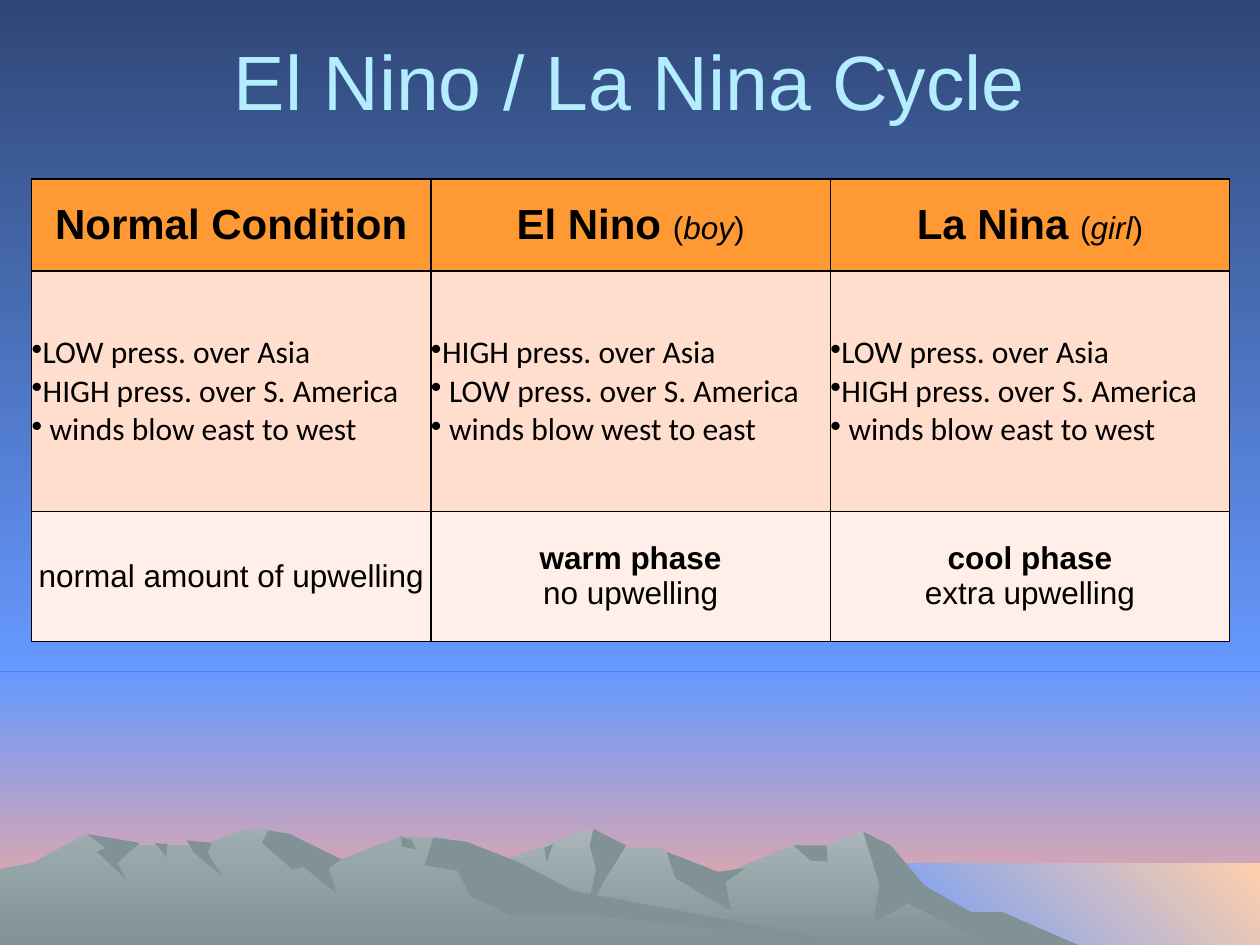
from pptx import Presentation
from pptx import util as u
from pptx.dml.color import RGBColor
from pptx.enum import shapes, text
from pptx.oxml import parse_xml
from pptx.oxml.ns import nsdecls

PX = 9144  # 100 px to the inch
WIDE, HIGH, HORIZON = 1000, 750, 533

# ---- Content ----
TITLE = "El Nino / La Nina Cycle"
HEADS = [("Normal Condition", ""), ("El Nino ", "boy"), ("La Nina ", "girl")]
USUAL = ["LOW press. over Asia", "HIGH press. over S. America", " winds blow east to west"]
TURNED = ["HIGH press. over Asia", " LOW press. over S. America", " winds blow west to east"]
FACTS = [USUAL, TURNED, USUAL]
PHASES = [("", "normal amount of upwelling"), ("warm phase", "no upwelling"),
          ("cool phase", "extra upwelling")]
COL_W, ROW_H = 317, (73, 191, 103)
ROW_FILL = ("FF9933", "FFDECD", "FFEFE8")

# ---- Scenery: colours (one, or two for a gradient) and outlines ----
SKY, DUSK, SEA = ("2F4776", "6699FF"), ("6699FF", "FFAA99"), ("6699FF", "FFCFAB")
FAR, NEAR, SHADE = ("AAB6B9", "809296"), ("9FADB0", "809296"), ("809296",)
BANDS = [  # box, colours, gradient angle
    ((0, HORIZON, WIDE, HIGH - HORIZON), DUSK, 270),
    ((0, 0, WIDE, HORIZON), SKY, 270),
    ((683, 685, 317, 67), SEA, 45),
]
HILLS = [
    # far range and its shaded faces
    (FAR, [(821, 751), (764, 723), (723, 698), (685, 660), (656, 671), (629, 671),
           (566, 697), (536, 690), (526, 673), (486, 673), (468, 658), (394, 685),
           (258, 751)]),
    (SHADE, [(858, 751), (796, 724), (771, 724), (734, 703), (707, 671), (685, 660),
             (698, 702), (693, 733), (720, 717), (792, 752)]),
    (SHADE, [(471, 658), (468, 671), (473, 690), (465, 727), (479, 700), (497, 671)]),
    (SHADE, [(529, 676), (536, 697), (580, 723), (576, 700), (592, 689), (570, 692)]),
    (SHADE, [(630, 671), (643, 683), (657, 684), (656, 671)]),
    (SHADE, [(432, 673), (439, 670), (434, 684)]),
    # near range and its shaded faces
    (NEAR, [(690, 751), (432, 712), (354, 665), (318, 664), (271, 682), (236, 681),
            (212, 658), (196, 658), (160, 671), (94, 671), (68, 662), (26, 685),
            (0, 690), (0, 751)]),
    (SHADE, [(213, 659), (208, 669), (232, 690), (241, 688), (267, 709), (261, 689),
             (271, 682), (230, 662)]),
    (SHADE, [(370, 668), (344, 665), (337, 687), (363, 691), (374, 712), (407, 727),
             (472, 727), (690, 751), (455, 707), (411, 684)]),
    (SHADE, [(318, 664), (327, 667), (330, 674), (319, 672)]),
    (SHADE, [(148, 667), (168, 669), (165, 677), (176, 695), (154, 677)]),
    (SHADE, [(123, 669), (133, 670), (132, 680)]),
    (SHADE, [(69, 662), (111, 669), (93, 685), (100, 698), (77, 676), (84, 673)]),
]


def rgb(code):
    return RGBColor.from_string(code)


def paint(fill, tones, angle=270):
    if len(tones) == 1:
        fill.solid()
        fill.fore_color.rgb = rgb(tones[0])
        return
    fill.gradient()
    fill.gradient_angle = angle
    for stop, tone in zip(fill.gradient_stops, tones):
        stop.color.rgb = rgb(tone)


def dress(shape, tones, angle=270):
    shape.shadow.inherit = False
    shape.line.fill.background()
    paint(shape.fill, tones, angle)


def add_run(para, words, size=18, font="Arial", tone="000000", bold=False, ital=False):
    run = para.add_run()
    run.text = words
    face = run.font
    face.size, face.name, face.bold, face.italic = u.Pt(size), font, bold, ital
    face.color.rgb = rgb(tone)


def add_para(frame, first, align=text.PP_ALIGN.CENTER):
    para = frame.paragraphs[0] if first else frame.add_paragraph()
    para.alignment = align
    return para


def add_bullet(para):
    props = para._p.get_or_add_pPr()
    props.set("marL", "0")
    props.set("indent", "0")
    for xml in ('<a:buClr %s><a:srgbClr val="000000"/></a:buClr>', '<a:buChar %s char="•"/>'):
        props.append(parse_xml(xml % nsdecls("a")))


def set_cell(cell, tone):
    cell.margin_left = cell.margin_right = cell.margin_top = cell.margin_bottom = 0
    cell.vertical_anchor = text.MSO_ANCHOR.MIDDLE
    props = cell._tc.get_or_add_tcPr()
    for side in ("lnL", "lnR", "lnT", "lnB"):
        props.append(parse_xml(
            f'<a:{side} {nsdecls("a")} w="12700"><a:solidFill>'
            f'<a:srgbClr val="000000"/></a:solidFill></a:{side}>'))
    paint(cell.fill, (tone,))


prs = Presentation()
prs.slide_width, prs.slide_height = WIDE * PX, HIGH * PX
slide = prs.slides.add_slide(prs.slide_layouts[5])
paint(slide.background.fill, SKY)

# Sky, sea and mountains
for box, tones, angle in BANDS:
    band = slide.shapes.add_shape(shapes.MSO_SHAPE.RECTANGLE, *(n * PX for n in box))
    dress(band, tones, angle)
for tones, points in HILLS:
    pen = slide.shapes.build_freeform(*points[0], scale=PX)
    pen.add_line_segments(points[1:], close=True)
    dress(pen.convert_to_shape(), tones)

# Title, brought in front of the scenery
title = slide.shapes.title
slide.shapes._spTree.append(title._element)
title.left, title.top, title.width, title.height = (n * PX for n in (50, 17, 900, 92))
title.text_frame.auto_size = text.MSO_AUTO_SIZE.NONE
title.text_frame.vertical_anchor = text.MSO_ANCHOR.MIDDLE
add_run(add_para(title.text_frame, True), TITLE, 44, tone="B3EDFF")

# Table
table = slide.shapes.add_table(3, 3, 25 * PX, 142 * PX, 3 * COL_W * PX, sum(ROW_H) * PX).table
for row, high, tone in zip(table.rows, ROW_H, ROW_FILL):
    row.height = high * PX
    for cell in row.cells:
        set_cell(cell, tone)
for col, (head, facts, phase) in enumerate(zip(HEADS, FACTS, PHASES)):
    table.columns[col].width = COL_W * PX
    top, mid, low = (table.cell(row, col).text_frame for row in range(3))
    name, sense = head
    para = add_para(top, True)
    add_run(para, name, 24, bold=True)
    if sense:
        add_run(para, "(")
        add_run(para, sense, ital=True)
        add_run(para, ")")
    for i, fact in enumerate(facts):
        para = add_para(mid, i == 0, text.PP_ALIGN.LEFT)
        add_bullet(para)
        add_run(para, fact, font="Calibri")
    stage, effect = phase
    if stage:
        add_run(add_para(low, True), stage, bold=True)
    add_run(add_para(low, not stage), effect)

prs.save("out.pptx")
